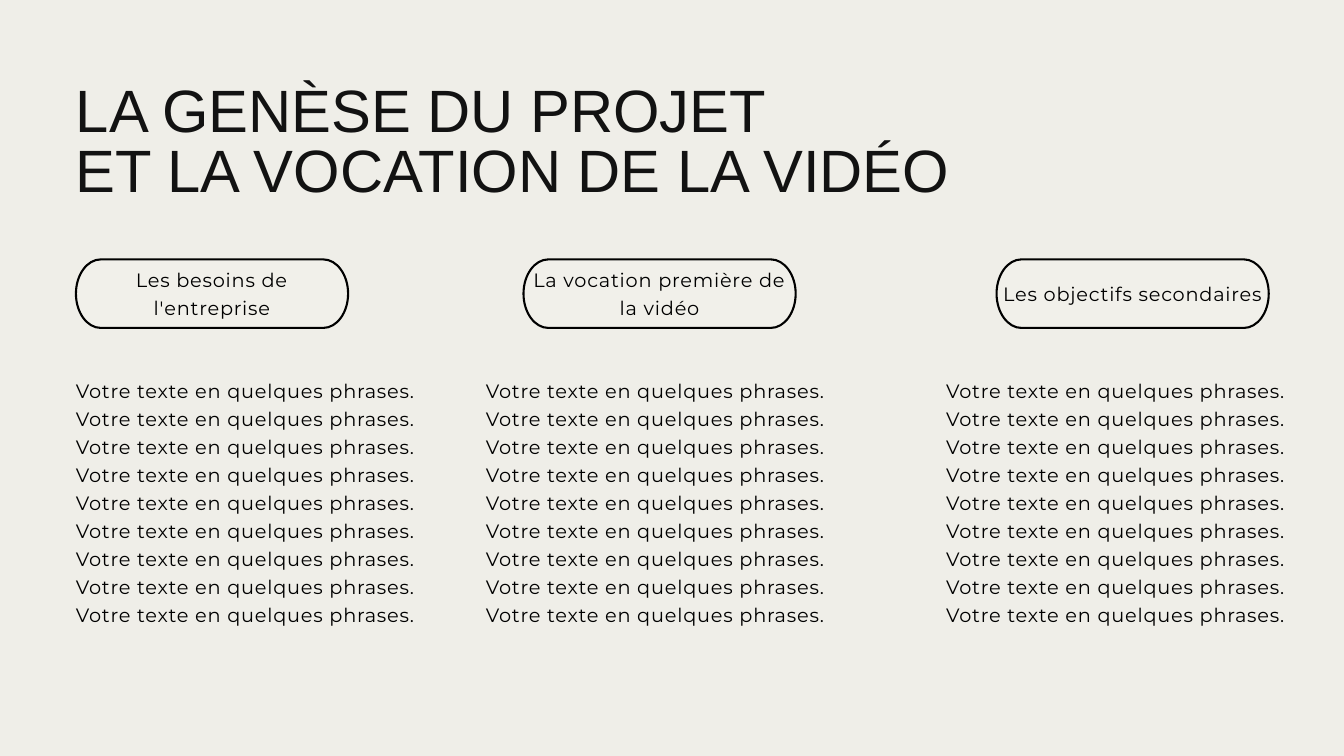
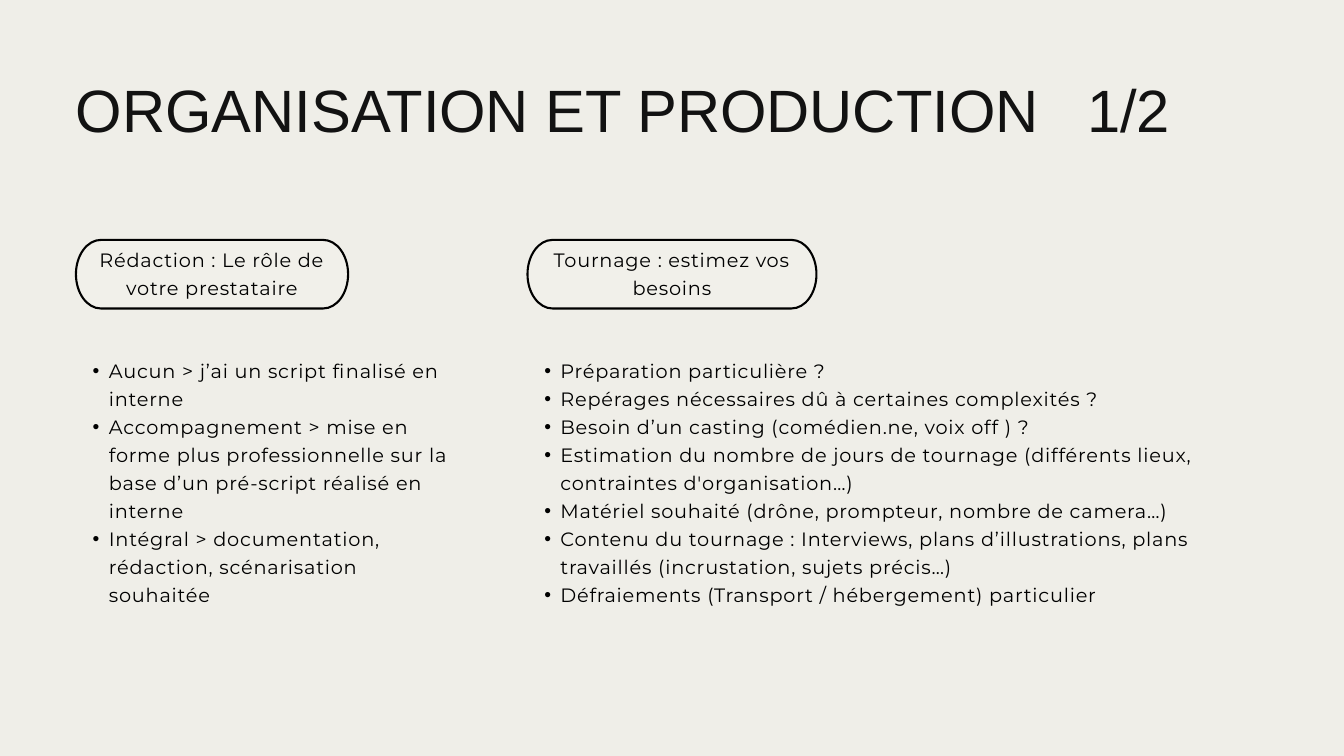
from lxml import etree
from pptx import Presentation
from pptx.dml.color import RGBColor
from pptx.enum.text import MSO_ANCHOR, MSO_AUTO_SIZE, PP_ALIGN
from pptx.oxml.ns import qn
from pptx.util import Inches, Pt

LEFT, CENTER = PP_ALIGN.LEFT, PP_ALIGN.CENTER
TOP, MIDDLE = MSO_ANCHOR.TOP, MSO_ANCHOR.MIDDLE
GROW, FIXED = MSO_AUTO_SIZE.SHAPE_TO_FIT_TEXT, MSO_AUTO_SIZE.NONE

PAPER = RGBColor(0xEF, 0xEE, 0xE8)
CREAM = RGBColor(0xF1, 0xF0, 0xEA)
INK = RGBColor(0x12, 0x12, 0x12)
BLACK = RGBColor(0, 0, 0)

MARGIN = 1.13
PILL_H, PILL_END = 1.02, 0.37
BEND = 0.55


def add_text(shapes, text, left, top, width, height, size=20.7, font="Montserrat",
             color=BLACK, lead=30, track=0.87, align=LEFT, anchor=TOP, inset=0,
             fit=GROW, bullet=False, tab=None):
    box = shapes.add_textbox(Inches(left), Inches(top), Inches(width), Inches(height))
    frame = box.text_frame
    frame.word_wrap = True
    frame.auto_size = fit
    frame.vertical_anchor = anchor
    frame.margin_left = frame.margin_right = Inches(inset)
    frame.margin_top = frame.margin_bottom = Inches(inset)
    for i, line in enumerate(text.split("\n")):
        para = frame.paragraphs[0] if i == 0 else frame.add_paragraph()
        para.alignment = align
        para.line_spacing = Pt(lead)
        props = para._p.get_or_add_pPr()
        if bullet:
            para.level = 1
            props.set("marL", str(Inches(0.49)))
            props.set("indent", str(Inches(-0.24)))
            etree.SubElement(props, qn("a:buFont"), typeface="Arial")
            etree.SubElement(props, qn("a:buChar"), char="•")
        if tab:
            stops = etree.SubElement(props, qn("a:tabLst"))
            etree.SubElement(stops, qn("a:tab"), pos=str(Inches(tab)), algn="l")
        run = para.add_run()
        run.text = line
        run.font.size = Pt(size)
        run.font.name = font
        run.font.color.rgb = color
        if track:
            run._r.get_or_add_rPr().set("spc", str(round(track * 100)))


def add_pill(slide, text, left, top, width):
    group = slide.shapes.add_group_shape()
    half = PILL_H / 2
    points = []
    for side, turn in ((left + width - PILL_END, 1), (left + PILL_END, -1)):
        for x, y in ((0, -1), (BEND, -1), (1, -BEND), (1, 0), (1, BEND), (BEND, 1), (0, 1)):
            points.append((Inches(side + turn * PILL_END * x),
                           Inches(top + half + turn * half * y)))
    path = group.shapes.build_freeform(*points[0])
    path.add_line_segments(points[1:], close=True)
    pill = path.convert_to_shape()
    lines = list(pill._element.iter(qn("a:lnTo")))
    for start in (0, 3, 7, 10):
        curve = etree.Element(qn("a:cubicBezTo"))
        lines[start].addprevious(curve)
        for line in lines[start:start + 3]:
            curve.append(line[0])
            line.getparent().remove(line)
    pill.shadow.inherit = False
    pill.fill.solid()
    pill.fill.fore_color.rgb = CREAM
    pill.line.color.rgb = BLACK
    pill.line.width = Pt(2.25)
    add_text(group.shapes, text, left, top - 0.08, width, 1.1,
             align=CENTER, anchor=MIDDLE, inset=0.06, fit=FIXED)


PHRASES = "\n".join(["Votre texte en quelques phrases."] * 9)
ROLES = """Aucun > j’ai un script finalisé en interne
Accompagnement > mise en forme plus professionnelle sur la base d’un pré-script réalisé en interne
Intégral > documentation, rédaction, scénarisation souhaitée"""
NEEDS = """Préparation particulière ?
Repérages nécessaires dû à certaines complexités ?
Besoin d’un casting (comédien.ne, voix off ) ?
Estimation du nombre de jours de tournage (différents lieux, contraintes d'organisation…)
Matériel souhaité (drône, prompteur, nombre de camera…)
Contenu du tournage : Interviews, plans d’illustrations, plans travaillés (incrustation, sujets précis…)
Défraiements (Transport / hébergement) particulier"""

PAGES = [
    ("LA GENÈSE DU PROJET\nET LA VOCATION DE LA VIDÉO", 2.7, None, 3.86, 5.57, 4.56, False, [
        ("Les besoins de l'entreprise", MARGIN, 4.05, PHRASES, MARGIN, 5.55),
        ("La vocation première de la vidéo", 7.79, 4.05, PHRASES, 7.23, 5.55),
        ("Les objectifs secondaires", 14.83, 4.05, PHRASES, 14.08, 5.55),
    ]),
    ("ORGANISATION ET PRODUCTION\t1/2", 0.93, 15.05, 3.57, 5.28, 4.15, True, [
        ("Rédaction : Le rôle de votre prestataire", MARGIN, 4.05, ROLES, MARGIN, 5.55),
        ("Tournage : estimez vos besoins", 7.85, 4.3, NEEDS, 7.85, 11.24),
    ]),
]

deck = Presentation()
deck.slide_width = Inches(20)
deck.slide_height = Inches(11.25)

for title, title_h, tab, pill_y, text_y, text_h, bullet, columns in PAGES:
    slide = deck.slides.add_slide(deck.slide_layouts[6])
    slide.background.fill.solid()
    slide.background.fill.fore_color.rgb = PAPER
    add_text(slide.shapes, title, MARGIN, 1.26, 17.75, title_h, size=64, font="Arial",
             color=INK, lead=64, track=0, tab=tab)
    for label, pill_x, pill_w, text, text_x, text_w in columns:
        add_pill(slide, label, pill_x, pill_y, pill_w)
        add_text(slide.shapes, text, text_x, text_y, text_w, text_h, bullet=bullet)

deck.save("out.pptx")
